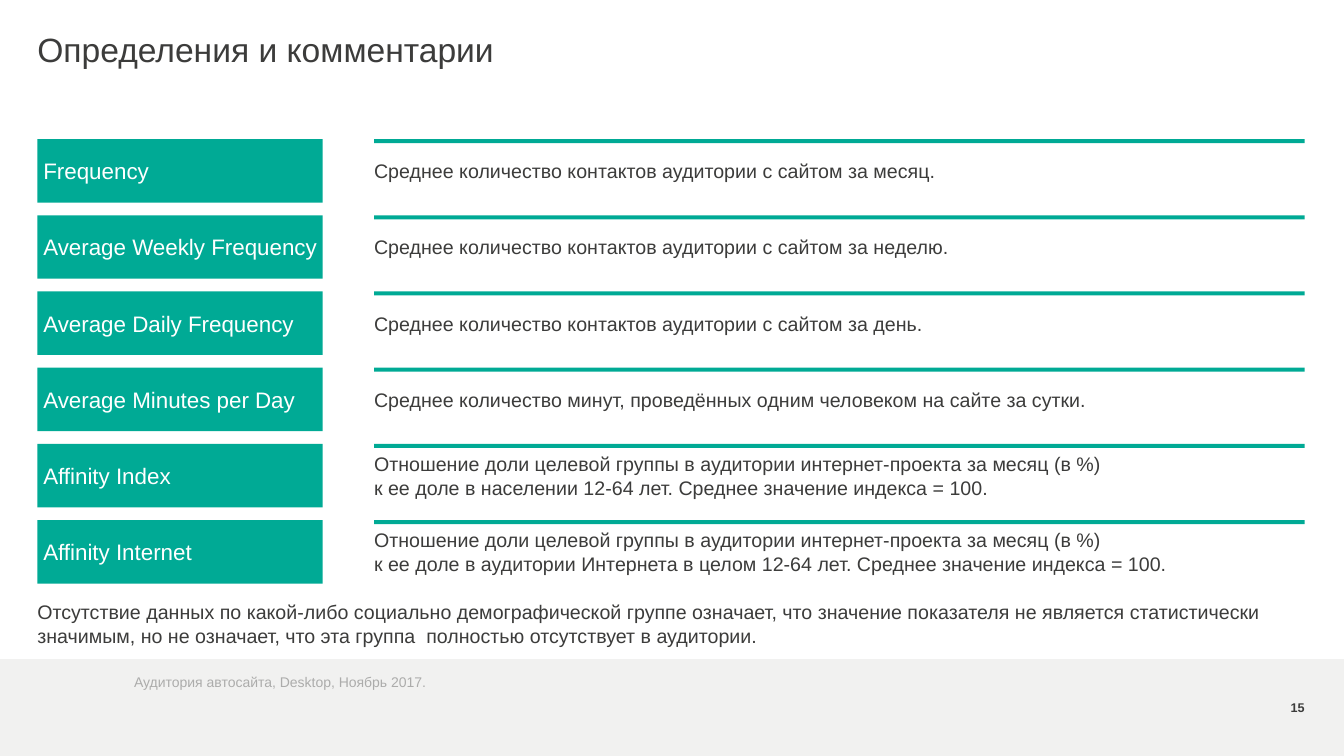
from pptx import Presentation
from pptx.dml.color import RGBColor
from pptx.enum.shapes import MSO_SHAPE as Shape
from pptx.enum.text import MSO_ANCHOR as Anchor, MSO_AUTO_SIZE as Fit, PP_ALIGN as Align
from pptx.util import Inches, Pt

TEAL = RGBColor(0x00, 0xAA, 0x95)
DARK = RGBColor(0x3C, 0x3C, 0x3B)
GREY = RGBColor(0xAC, 0xAC, 0xAB)
PALE = RGBColor(0xF1, 0xF1, 0xF0)
WHITE = RGBColor(0xFF, 0xFF, 0xFF)
FONT = "Arial"

LEFT, WIDE = 0.37, 12.56
TOP, STEP, HIGH = 1.38, 0.756, 0.63
TERM_W = 2.83
TEXT_X, TEXT_W = 3.71, 9.23

TERMS = [
    ("Frequency", "Среднее количество контактов аудитории с сайтом за месяц."),
    ("Average Weekly Frequency",
     "Среднее количество контактов аудитории с сайтом за неделю."),
    ("Average Daily Frequency",
     "Среднее количество контактов аудитории с сайтом за день."),
    ("Average Minutes per Day",
     "Среднее количество минут, проведённых одним человеком на сайте за сутки."),
    ("Affinity Index",
     "Отношение доли целевой группы в аудитории интернет-проекта за месяц (в %)\n"
     "к ее доле в населении 12-64 лет. Среднее значение индекса = 100."),
    ("Affinity Internet",
     "Отношение доли целевой группы в аудитории интернет-проекта за месяц (в %)\n"
     "к ее доле в аудитории Интернета в целом 12-64 лет. "
     "Среднее значение индекса = 100."),
]
NOTE = ("Отсутствие данных по какой-либо социально демографической группе означает, "
        "что значение показателя не является статистически значимым, но не означает, "
        "что эта группа  полностью отсутствует в аудитории.")


def write(shape, text, size=14, color=DARK, bold=False, align=Align.LEFT,
          anchor=Anchor.MIDDLE, inset=0, line=None):
    """Fill a shape with one formatted paragraph."""
    frame = shape.text_frame
    frame.word_wrap = True
    frame.auto_size = Fit.NONE
    frame.vertical_anchor = anchor
    frame.margin_left = Inches(inset)
    frame.margin_right = frame.margin_top = frame.margin_bottom = 0
    para = frame.paragraphs[0]
    para.text = text
    para.alignment = align
    para.space_before = Pt(0)
    if line:
        para.line_spacing = Pt(line)
    for run in para.runs:
        font = run.font
        font.name, font.size, font.bold = FONT, Pt(size), bold
        font.color.rgb = color


class Page:
    """The current slide and its flat style."""

    def __init__(self, deck):
        self.slide = deck.slides.add_slide(deck.slide_layouts[5])
        self.shapes = self.slide.shapes

    def title(self, text, x, y, w, h):
        head = self.shapes.title
        head.left, head.top = Inches(x), Inches(y)
        head.width, head.height = Inches(w), Inches(h)
        write(head, text, size=24, anchor=Anchor.TOP, line=26)

    def block(self, x, y, w, h, fill):
        rect = self.shapes.add_shape(
            Shape.RECTANGLE, Inches(x), Inches(y), Inches(w), Inches(h))
        rect.shadow.inherit = False
        rect.fill.solid()
        rect.fill.fore_color.rgb = fill
        rect.line.fill.background()
        return rect

    def label(self, text, x, y, w, h, **style):
        box = self.shapes.add_textbox(Inches(x), Inches(y), Inches(w), Inches(h))
        write(box, text, **style)

    def term(self, name, text, y):
        self.block(TEXT_X, y, TEXT_W, 0.04, TEAL)
        cell = self.block(LEFT, y, TERM_W, HIGH, TEAL)
        write(cell, name, size=16, color=WHITE, inset=0.06)
        self.label(text, TEXT_X, y, TEXT_W, HIGH)


def main():
    deck = Presentation()
    deck.slide_width, deck.slide_height = Inches(13.33), Inches(7.5)
    page = Page(deck)

    # Footer band and title
    page.block(0, 6.54, 13.33, 0.96, PALE)
    page.title("Определения и комментарии", LEFT, 0.33, WIDE, 0.58)

    # Terms with their definitions
    for row, (name, text) in enumerate(TERMS):
        page.term(name, text, TOP + row * STEP)

    # Note, source line and page number
    page.label(NOTE, LEFT, 5.91, WIDE, 0.55)
    page.label("Аудитория автосайта, Desktop, Ноябрь 2017.", 1.33, 6.68, 11.02, 0.18,
               size=10, color=GREY, anchor=Anchor.TOP)
    page.label("15", 12.49, 6.93, 0.45, 0.18, size=9, bold=True, align=Align.RIGHT)

    deck.save("out.pptx")


if __name__ == "__main__":
    main()
